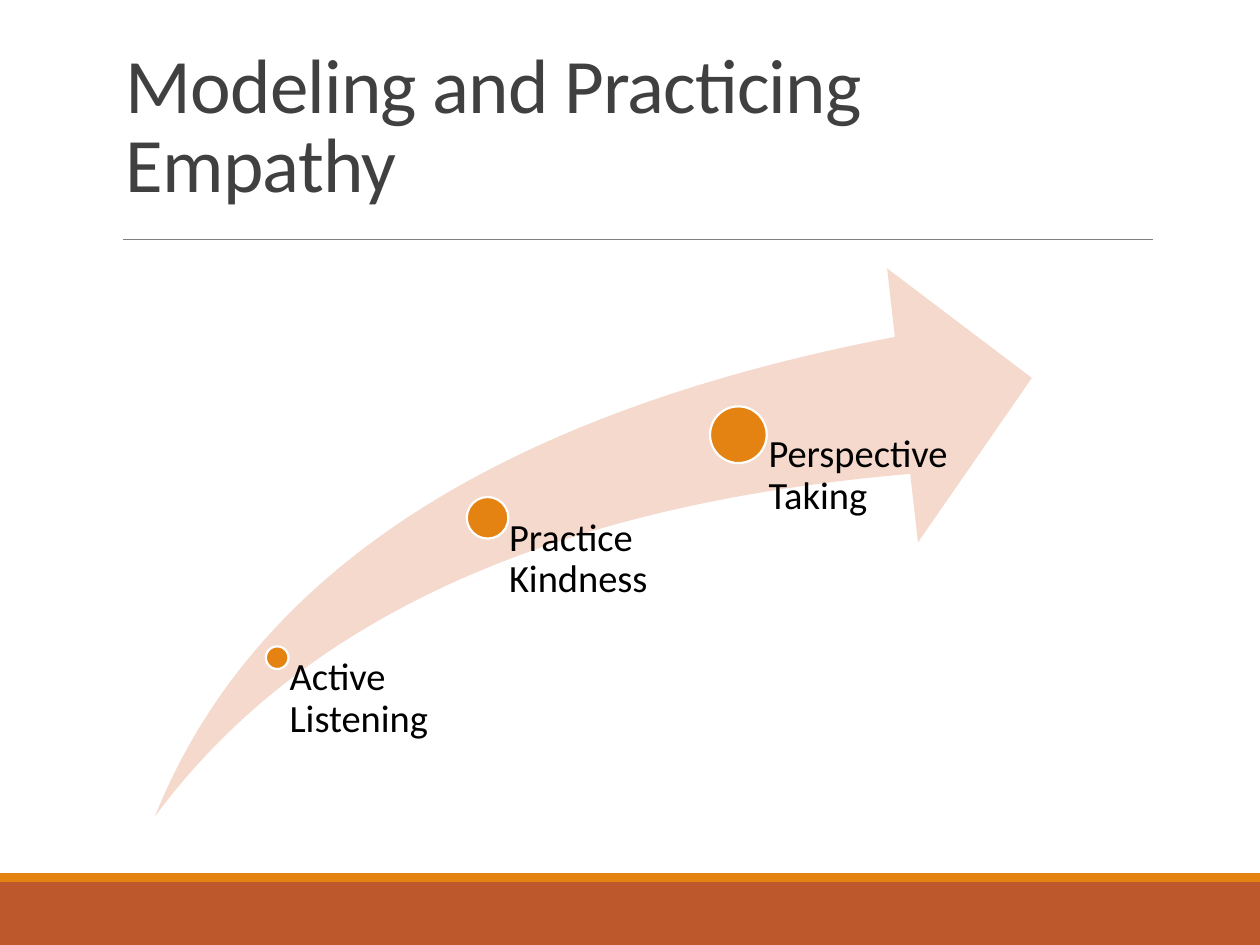
"""Build the slide on modeling and practicing empathy, with three steps along a rising arrow."""
from dataclasses import dataclass

from lxml import etree
from pptx import Presentation
from pptx.dml.color import RGBColor
from pptx.enum.shapes import MSO_CONNECTOR, MSO_SHAPE
from pptx.enum.text import MSO_ANCHOR, PP_ALIGN
from pptx.oxml.ns import qn
from pptx.shapes.autoshape import Shape
from pptx.slide import Slide
from pptx.util import Inches, Pt

RECTANGLE = MSO_SHAPE.RECTANGLE
OVAL = MSO_SHAPE.OVAL
SWOOSH = MSO_SHAPE.SWOOSH_ARROW
STRAIGHT = MSO_CONNECTOR.STRAIGHT
TOP = MSO_ANCHOR.TOP
BOTTOM = MSO_ANCHOR.BOTTOM
LEFT = PP_ALIGN.LEFT

RUST = RGBColor(0xBD, 0x58, 0x2C)
ORANGE = RGBColor(0xE4, 0x83, 0x12)
PEACH = RGBColor(0xF5, 0xD9, 0xCC)
WHITE = RGBColor(0xFF, 0xFF, 0xFF)
BLACK = RGBColor(0x00, 0x00, 0x00)
CHARCOAL = RGBColor(0x40, 0x40, 0x40)
GRAY = RGBColor(0x80, 0x80, 0x80)

FONT = "Calibri"
ARROW_BOTTOM = 6.48


@dataclass(frozen=True)
class Box:
    """Place and size in inches."""

    left: float
    top: float
    width: float
    height: float

    def lengths(self) -> tuple[Inches, ...]:
        """Return the four values as lengths."""
        return tuple(map(Inches, (self.left, self.top, self.width, self.height)))


@dataclass(frozen=True)
class Step:
    """A dot on the arrow with its label to the lower right."""

    label: str
    center_x: float
    center_y: float
    diameter: float
    label_width: float
    indent: float


STEPS = (
    Step("Active Listening", 2.2, 5.22, 0.18, 1.62, 0.1),
    Step("Practice Kindness", 3.87, 4.11, 0.33, 1.67, 0.17),
    Step("Perspective Taking", 5.86, 3.45, 0.45, 1.67, 0.24),
)


def add_filled(slide: Slide, kind: MSO_SHAPE, box: Box, color: RGBColor) -> Shape:
    """Add a preset shape with a plain fill and no outline."""
    shape = slide.shapes.add_shape(kind, *box.lengths())
    shape.shadow.inherit = False
    shape.fill.solid()
    shape.fill.fore_color.rgb = color
    shape.line.fill.background()
    return shape


def add_text(slide: Slide, text: str, box: Box, frame_format: dict,
             line_spacing: float, size: int, color: RGBColor) -> Shape:
    """Add a wrapping text box with one paragraph."""
    text_box = slide.shapes.add_textbox(*box.lengths())
    frame = text_box.text_frame
    for name, value in {"word_wrap": True, **frame_format}.items():
        setattr(frame, name, value)
    paragraph = frame.paragraphs[0]
    for name, value in {"alignment": LEFT, "line_spacing": line_spacing}.items():
        setattr(paragraph, name, value)
    run = paragraph.add_run()
    run.text = text
    for name, value in {"name": FONT, "size": Pt(size)}.items():
        setattr(run.font, name, value)
    run.font.color.rgb = color
    return text_box


def add_title(slide: Slide) -> None:
    """Add the slightly tightened title and the rule below it."""
    frame_format = {"vertical_anchor": BOTTOM, "margin_right": Inches(0.2)}
    title = add_text(slide, "Modeling and Practicing Empathy", Box(0.9, 0.11, 8.25, 1.59),
                     frame_format, 0.85, 44, CHARCOAL)
    title.text_frame.paragraphs[0].runs[0].font._element.set("spc", "-50")
    rule = slide.shapes.add_connector(
        STRAIGHT, Inches(0.98), Inches(1.9), Inches(9.15), Inches(1.9))
    rule.line.color.rgb = GRAY
    rule.line.width = Pt(0.5)
    etree.SubElement(rule._element.spPr, qn("a:effectLst"))


def add_step(slide: Slide, step: Step) -> None:
    """Add a dot and a label that runs from its center to the arrow's bottom."""
    radius = step.diameter / 2
    dot_box = Box(step.center_x - radius, step.center_y - radius, step.diameter, step.diameter)
    dot = add_filled(slide, OVAL, dot_box, ORANGE)
    dot.line.color.rgb = WHITE
    dot.line.width = Pt(1.25)
    label_box = Box(step.center_x, step.center_y, step.label_width, ARROW_BOTTOM - step.center_y)
    frame_format = {
        "vertical_anchor": TOP,
        "margin_left": Inches(step.indent),
        "margin_top": 0,
        "margin_right": 0,
        "margin_bottom": 0,
    }
    add_text(slide, step.label, label_box, frame_format, 0.9, 22, BLACK)


def main() -> None:
    """Build and save the slide."""
    deck = Presentation()
    deck.slide_width, deck.slide_height = Inches(10), Inches(7.5)
    slide = deck.slides.add_slide(deck.slide_layouts[6])
    add_filled(slide, RECTANGLE, Box(0, 7, 10, 0.5), RUST)
    add_filled(slide, RECTANGLE, Box(0, 6.93, 10, 0.07), ORANGE)
    add_title(slide)
    arrow = add_filled(slide, SWOOSH, Box(1.23, 2.13, 6.96, ARROW_BOTTOM - 2.13), PEACH)
    for index in range(2):
        arrow.adjustments[index] = 0.25
    for step in STEPS:
        add_step(slide, step)
    deck.save("out.pptx")


if __name__ == "__main__":
    main()
